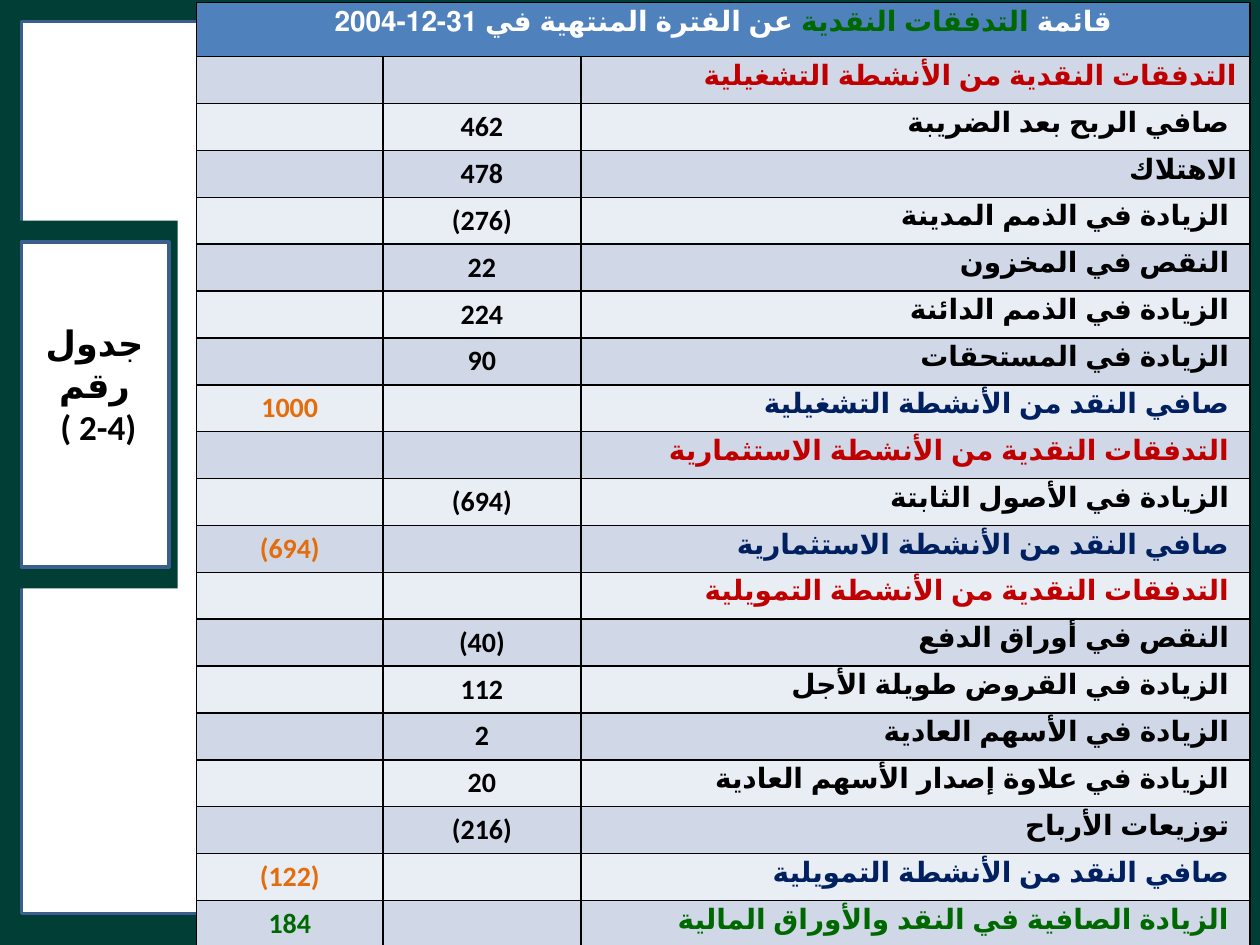
from lxml import etree
from pptx import Presentation
from pptx.dml.color import RGBColor
from pptx.enum import lang, shapes, text
from pptx.oxml.ns import qn
from pptx.util import Inches, Pt


def tint(item, shade):
    item.solid()
    item.fore_color.rgb = RGBColor.from_string(shade)


def style(para, size, shade):
    para.alignment = text.PP_ALIGN.CENTER
    for run in para.runs:
        run.font.name = "Calibri"
        run.font.size = Pt(size)
        run.font.bold = True
        run.font.language_id = lang.MSO_LANGUAGE_ID.ARABIC
        tint(run.font.fill, shade)


DARK, WHITE, BLACK = "013E36", "FFFFFF", "000000"
RED, NAVY, ORANGE, GREEN = "C00000", "002060", "E46C0A", "006800"

deck = Presentation()
deck.slide_width, deck.slide_height = Inches(10), Inches(7.5)
slide = deck.slides.add_slide(deck.slide_layouts[6])

panels = [
    (0, 0, 10, 7.5, DARK),
    (0.17, 0.17, 9.58, 7.08, WHITE),
    (0.08, 1.75, 1.33, 2.92, DARK),
    (0.17, 1.92, 1.17, 2.58, WHITE),
]
rows = [
    ("", "", "التدفقات النقدية من الأنشطة التشغيلية", RED),
    ("", "462", "صافي الربح بعد الضريبة ", BLACK),
    ("", "478", "الاهتلاك", BLACK),
    ("", "(276)", "الزيادة في الذمم المدينة ", BLACK),
    ("", "22", "النقص في المخزون ", BLACK),
    ("", "224", "الزيادة في الذمم الدائنة ", BLACK),
    ("", "90", "الزيادة في المستحقات ", BLACK),
    ("1000", "", "صافي النقد من الأنشطة التشغيلية ", NAVY),
    ("", "", "التدفقات النقدية من الأنشطة الاستثمارية ", RED),
    ("", "(694)", "الزيادة في الأصول الثابتة ", BLACK),
    ("(694)", "", "صافي النقد من الأنشطة الاستثمارية ", NAVY),
    ("", "", "التدفقات النقدية من الأنشطة التمويلية ", RED),
    ("", "(40)", "النقص في أوراق الدفع ", BLACK),
    ("", "112", "الزيادة في القروض طويلة الأجل ", BLACK),
    ("", "2", "الزيادة في الأسهم العادية ", BLACK),
    ("", "20", "الزيادة في علاوة إصدار الأسهم العادية ", BLACK),
    ("", "(216)", "توزيعات الأرباح ", BLACK),
    ("(122)", "", "صافي النقد من الأنشطة التمويلية ", NAVY),
    ("184", "", "الزيادة الصافية في النقد والأوراق المالية ", GREEN),
]
title = [
    ("قائمة ", WHITE),
    ("التدفقات النقدية ", GREEN),
    ("عن الفترة المنتهية في 31-12-2004", WHITE),
]

for spot, (left, top, width, height, shade) in enumerate(panels):
    if spot == 2:
        frame = slide.shapes.add_table(
            len(rows) + 1, 3, Inches(1.56), Inches(0.02), Inches(8.36), Inches(7.46))
    panel = slide.shapes.add_shape(
        shapes.MSO_SHAPE.RECTANGLE, Inches(left), Inches(top), Inches(width), Inches(height))
    panel.shadow.inherit = False
    tint(panel.fill, shade)
    if shade == WHITE:
        tint(panel.line.fill, "3A5F8C")
        panel.line.width = Pt(2)
    else:
        panel.line.fill.background()

table = frame.table
for column, width in zip(table.columns, (1.48, 1.57, 5.31)):
    column.width = Inches(width)
for line in table.rows:
    line.height = Inches(0.37)
table.rows[0].height = Inches(0.43)

for y, (total, part, label, shade) in enumerate(rows, 1):
    sum_shade = GREEN if shade == GREEN else ORANGE
    for x, (words, ink) in enumerate([(total, sum_shade), (part, BLACK), (label, shade)]):
        cell = table.cell(y, x)
        para = cell.text_frame.paragraphs[0]
        if words:
            para.text = words
            style(para, 16, ink)
        else:
            etree.SubElement(para._p, qn("a:endParaRPr"), sz="1600", b="1")
        if x == 2:
            para.alignment = text.PP_ALIGN.RIGHT

table.cell(0, 0).merge(table.cell(0, 2))
head = table.cell(0, 0).text_frame.paragraphs[0]
for words, _ in title:
    head.add_run().text = words
style(head, 16, WHITE)
for run, (_, ink) in zip(head.runs, title):
    tint(run.font.fill, ink)

for y in range(len(rows) + 1):
    for x in range(3):
        cell = table.cell(y, x)
        props = cell._tc.get_or_add_tcPr()
        for side in ("lnL", "lnR", "lnT", "lnB"):
            edge = etree.SubElement(props, qn("a:" + side), w=str(Pt(1)))
            fill = etree.SubElement(edge, qn("a:solidFill"))
            etree.SubElement(fill, qn("a:srgbClr"), val=BLACK)
        tint(cell.fill, "4F81BD" if y == 0 else "D0D8E8" if y % 2 else "E9EDF4")

note = slide.shapes.add_textbox(Inches(0), Inches(2.58), Inches(1.5), Inches(1.25)).text_frame
note.word_wrap = True
note.vertical_anchor = text.MSO_ANCHOR.MIDDLE
note.text = "جدول رقم\n ( 2-4)\v"
for para in note.paragraphs:
    style(para, 20, BLACK)

deck.save("out.pptx")
